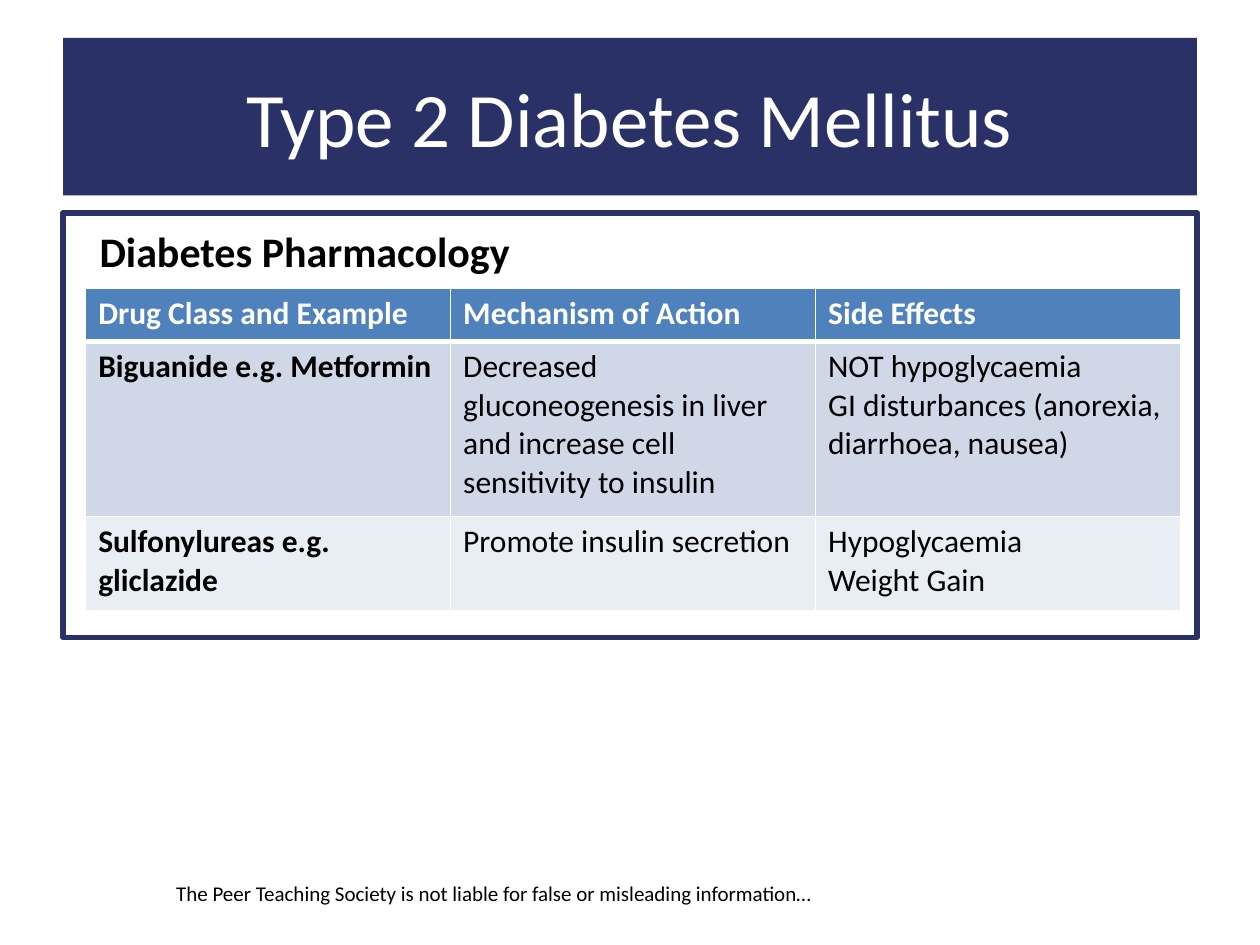
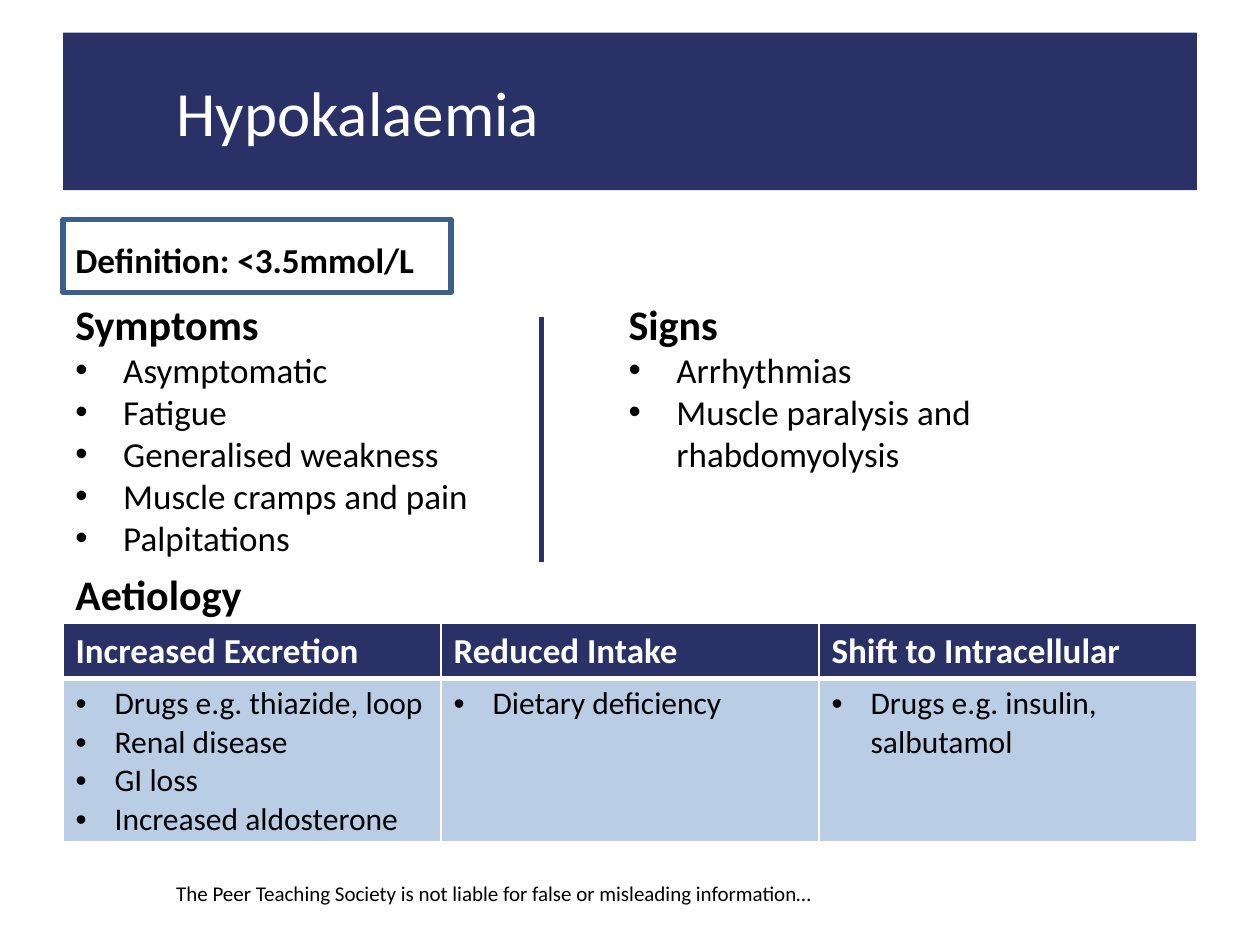
from dataclasses import dataclass
from lxml.etree import SubElement
from pptx import Presentation
from pptx.dml.color import RGBColor
from pptx.enum.shapes import MSO_CONNECTOR, MSO_SHAPE
from pptx.enum.text import MSO_ANCHOR, MSO_AUTO_SIZE, PP_ALIGN
from pptx.oxml.ns import qn
from pptx.util import Emu, Inches, Pt

COLUMNS, ROWS = 100, 75
WIDTH, HEIGHT = Inches(10), Inches(7.5)
FONT = "Calibri"
NAVY, BLUE, STEEL = "293167", "4F81BD", "3A5F8C"
PALE, PALER, SKY = "D0D8E8", "E9EDF4", "B9CDE5"
BLACK, WHITE = "000000", "FFFFFF"
MARGIN, CONTENT = 5, 90
INDENT = 13  # left edge of the footer and of a left-aligned title
DISCLAIMER = "The Peer Teaching Society is not liable for false or misleading information…"


@dataclass(frozen=True)
class Box:
    """A rectangle in grid columns and rows."""
    left: float
    top: float
    width: float
    height: float

    def emu(self) -> tuple[Emu, Emu, Emu, Emu]:
        return col(self.left), row(self.top), col(self.width), row(self.height)


@dataclass(frozen=True)
class Para:
    text: str
    size: float
    bold: bool = False
    color: str = BLACK
    hang: float = 0  # hanging indent of a bullet, in inches


@dataclass(frozen=True)
class Table:
    box: Box
    heights: tuple[float, ...]
    fills: tuple[str, ...]
    cells: list[list[list[Para]]]


def col(n: float) -> Emu:
    return Emu(round(WIDTH * n / COLUMNS))


def row(n: float) -> Emu:
    return Emu(round(HEIGHT * n / ROWS))


def rgb(color: str) -> RGBColor:
    return RGBColor.from_string(color)


def heading(text: str) -> Para:
    return Para(text, 24, bold=True)


def bullets(size: float, hang: float, *items: str) -> list[Para]:
    return [Para(item, size, hang=hang) for item in items]


def write(tf, paras: list[Para]) -> None:
    for i, para in enumerate(paras):
        p = tf.paragraphs[0] if i == 0 else tf.add_paragraph()
        p.text = para.text
        if para.hang:
            pPr = p._p.get_or_add_pPr()
            pPr.set("marL", str(Inches(para.hang)))
            pPr.set("indent", str(-Inches(para.hang)))
            SubElement(pPr, qn("a:buFont"), typeface="Arial")
            SubElement(pPr, qn("a:buChar"), char="•")
        for r in p.runs:
            r.font.name = FONT
            r.font.size = Pt(para.size)
            r.font.bold = para.bold
            r.font.color.rgb = rgb(para.color)


def add_text(s, box: Box, paras: list[Para]) -> None:
    tf = s.shapes.add_textbox(*box.emu()).text_frame
    tf.word_wrap = True
    write(tf, paras)


def add_frame(s, box: Box, color: str, para: Para, anchor: MSO_ANCHOR,
              inset: float = 1) -> None:
    """An outlined box without fill that holds one line of text."""
    sp = s.shapes.add_shape(MSO_SHAPE.RECTANGLE, *box.emu())
    sp.shadow.inherit = False
    sp.fill.background()
    sp.line.color.rgb = rgb(color)
    sp.line.width = Pt(3)
    tf = sp.text_frame
    tf.word_wrap = True
    tf.vertical_anchor = anchor
    tf.margin_left, tf.margin_top = col(inset), row(1)
    write(tf, [para])
    tf.paragraphs[0].alignment = PP_ALIGN.LEFT


def add_divider(s, x: float, top: float, bottom: float) -> None:
    line = s.shapes.add_connector(MSO_CONNECTOR.STRAIGHT, col(x), row(top), col(x), row(bottom))
    line.line.color.rgb = rgb(NAVY)
    line.line.width = Pt(3)
    SubElement(line._element.spPr, qn("a:effectLst"))


def set_borders(cell, bottom: float, top: float) -> None:
    tcPr = cell._tc.get_or_add_tcPr()
    for side, width in (("L", 1), ("R", 1), ("T", top), ("B", bottom)):
        ln = SubElement(tcPr, qn(f"a:ln{side}"), w=str(Pt(width)))
        fill = SubElement(ln, qn("a:solidFill"))
        SubElement(fill, qn("a:srgbClr"), val=WHITE)


def add_table(s, table: Table) -> None:
    """A table with equal columns and a thick rule below its header."""
    n = len(table.cells[0])
    tbl = s.shapes.add_table(len(table.cells), n, *table.box.emu()).table
    for column in tbl.columns:
        column.width = col(table.box.width / n)
    for i, (height, fill, cells) in enumerate(zip(table.heights, table.fills, table.cells)):
        tbl.rows[i].height = row(height)
        for j, paras in enumerate(cells):
            cell = tbl.cell(i, j)
            set_borders(cell, bottom=3 if i == 0 else 1, top=3 if i == 1 else 1)
            cell.fill.solid()
            cell.fill.fore_color.rgb = rgb(fill)
            write(cell.text_frame, paras)


def header(size: float, *titles: str) -> list[list[Para]]:
    return [[Para(title, size, bold=True, color=WHITE)] for title in titles]


def drug_row(drug: str, mechanism: str, *effects: str) -> list[list[Para]]:
    return [[Para(drug, 18, bold=True)], [Para(mechanism, 18)],
            [Para(effect, 18) for effect in effects]]


def new_slide(prs, title: str, size: float, top: float, align: PP_ALIGN, inset: float = 1):
    """A slide with the navy title band and the disclaimer."""
    s = prs.slides.add_slide(prs.slide_layouts[5])
    band = s.shapes.title
    band.left, band.top, band.width, band.height = Box(MARGIN, top, CONTENT, 12.5).emu()
    band.fill.solid()
    band.fill.fore_color.rgb = rgb(NAVY)
    tf = band.text_frame
    tf.auto_size = MSO_AUTO_SIZE.NONE
    tf.vertical_anchor = MSO_ANCHOR.MIDDLE
    tf.margin_left = col(inset)
    write(tf, [Para(title, size, color=WHITE)])
    tf.paragraphs[0].alignment = align
    add_text(s, Box(INDENT, 69.4, 55.4, 3), [Para(DISCLAIMER, 12)])
    return s


def pharmacology_slide(prs) -> None:
    s = new_slide(prs, "Type 2 Diabetes Mellitus", 44, 3, PP_ALIGN.CENTER)
    add_frame(s, Box(MARGIN, 16.9, CONTENT, 33.7), NAVY,
              heading("Diabetes Pharmacology"), MSO_ANCHOR.TOP, inset=2.9)
    add_table(s, Table(
        Box(6.8, 22.9, 86.9, 25.6), (4.2, 13.9, 7.5), (BLUE, PALE, PALER),
        [header(18, "Drug Class and Example", "Mechanism of Action", "Side Effects"),
         drug_row("Biguanide e.g. Metformin",
                  "Decreased gluconeogenesis in liver and increase cell sensitivity to insulin",
                  "NOT hypoglycaemia", "GI disturbances (anorexia, diarrhoea, nausea)"),
         drug_row("Sulfonylureas e.g. gliclazide", "Promote insulin secretion",
                  "Hypoglycaemia", "Weight Gain")]))


def hypokalaemia_slide(prs) -> None:
    s = new_slide(prs, "Hypokalaemia", 36, 2.6, PP_ALIGN.LEFT, inset=INDENT - MARGIN + 1)
    add_frame(s, Box(MARGIN, 17.4, 30.8, 5.8), STEEL,
              Para("Definition: <3.5mmol/L", 20, bold=True), MSO_ANCHOR.MIDDLE)
    add_text(s, Box(MARGIN, 23.2, 37, 21), [heading("Symptoms")] + bullets(
        20, 0.38, "Asymptomatic", "Fatigue", "Generalised weakness",
        "Muscle cramps and pain", "Palpitations"))
    add_text(s, Box(48.9, 23.2, 46.1, 21), [heading("Signs")] + bullets(
        20, 0.38, "Arrhythmias", "Muscle paralysis and rhabdomyolysis"))
    add_divider(s, 43, 25.2, 44.6)
    add_text(s, Box(MARGIN, 44.6, 19, 5), [heading("Aetiology")])
    causes = [("Drugs e.g. thiazide, loop", "Renal disease", "GI loss", "Increased aldosterone"),
              ("Dietary deficiency",),
              ("Drugs e.g. insulin, salbutamol",)]
    add_table(s, Table(
        Box(MARGIN, 49.5, CONTENT, 17.3), (4.3, 13), (NAVY, SKY),
        [header(20, "Increased Excretion", "Reduced Intake", "Shift to Intracellular"),
         [bullets(18, 0.31, *items) for items in causes]]))


def main() -> None:
    prs = Presentation()
    prs.slide_width, prs.slide_height = WIDTH, HEIGHT
    pharmacology_slide(prs)
    hypokalaemia_slide(prs)
    prs.save("out.pptx")


if __name__ == "__main__":
    main()
